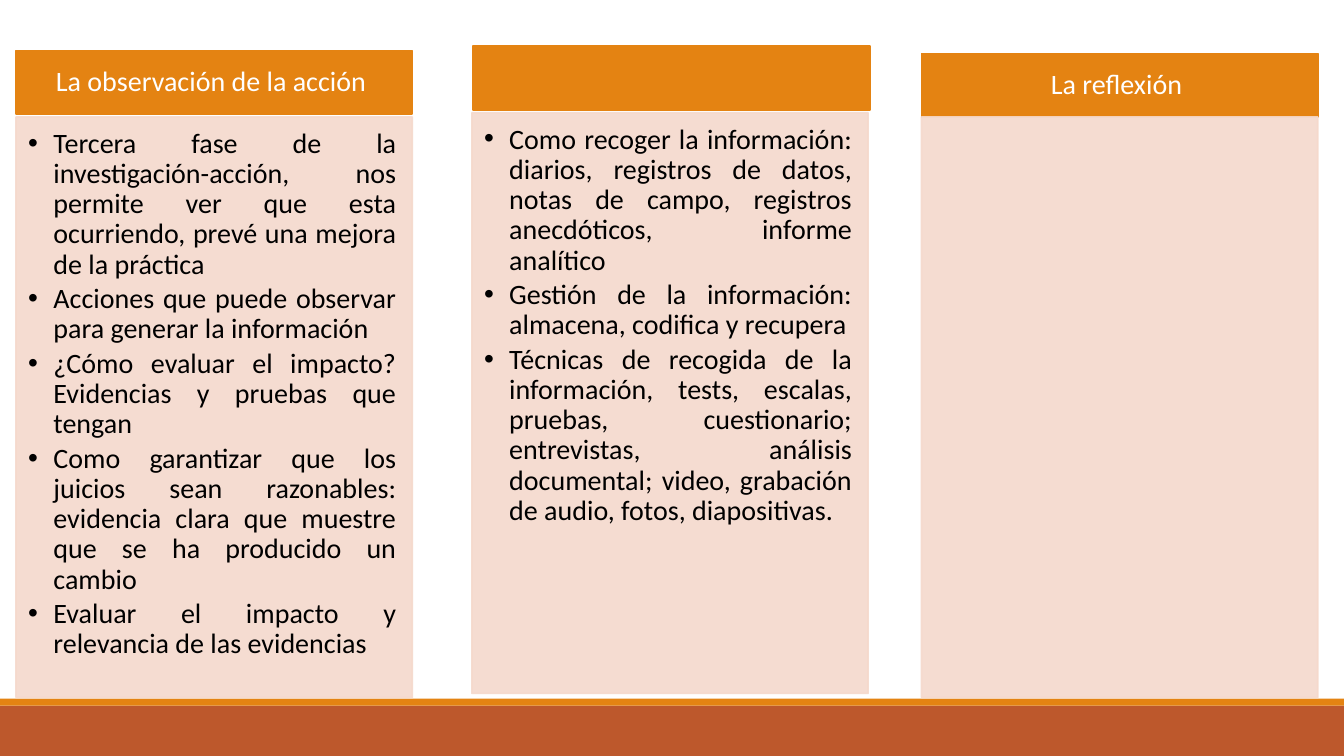
from lxml import etree
from pptx import Presentation
from pptx import util as u
from pptx.dml.color import RGBColor
from pptx.enum import shapes, text
from pptx.oxml.ns import qn

ORANGE, RUST, PINK = "E48312", "BD582C", "F5D9CC"
WHITE, BLACK = "FFFFFF", "000000"


def rgb(code):
    return RGBColor.from_string(code)


class Deck:
    font = "Calibri"
    size = u.Pt(20)

    def __init__(self):
        self.prs = Presentation()
        self.prs.slide_width = u.Inches(13.33)
        self.prs.slide_height = u.Inches(7.5)
        self.slide = self.prs.slides.add_slide(self.prs.slide_layouts[6])

    def rect(self, left, top, width, height, color, edge=True, alpha=100):
        wide, high = self.prs.slide_width / 100, self.prs.slide_height / 100
        box = self.slide.shapes.add_shape(
            shapes.MSO_SHAPE.RECTANGLE,
            round(left * wide), round(top * high),
            round(width * wide), round(height * high))
        box.shadow.inherit = False
        box.fill.solid()
        box.fill.fore_color.rgb = rgb(color)
        if edge:
            box.line.color.rgb = rgb(color)
            box.line.width = u.Pt(1.25)
        else:
            box.line.fill.background()
        if alpha < 100:
            for node in box._element.spPr.iter(qn("a:srgbClr")):
                etree.SubElement(node, qn("a:alpha")).set("val", str(alpha * 1000))
        return box

    def label(self, box, lines, color, align, anchor, inset, after):
        frame = box.text_frame
        frame.word_wrap = True
        frame.vertical_anchor = anchor
        (frame.margin_left, frame.margin_top, frame.margin_right,
         frame.margin_bottom) = map(u.Inches, inset)
        frame.text = "\n".join(lines)
        for para in frame.paragraphs:
            para.alignment = align
            para.line_spacing = 0.9
            para.space_after = u.Pt(after)
            for run in para.runs:
                run.font.name = self.font
                run.font.size = self.size
                run.font.color.rgb = rgb(color)
        return frame

    def head(self, left, top, width, title):
        box = self.rect(left, top, width, 8.4, ORANGE)
        if title:
            self.label(box, [title], WHITE, text.PP_ALIGN.CENTER,
                       text.MSO_ANCHOR.MIDDLE, (0.16, 0.09, 0.16, 0.09), 7)

    def body(self, left, top, width, items):
        box = self.rect(left, top, width, 76.8, PINK, alpha=90)
        if not items:
            return
        frame = self.label(box, items, BLACK, text.PP_ALIGN.JUSTIFY,
                           text.MSO_ANCHOR.TOP, (0.12, 0.12, 0.16, 0.17), 3)
        for para in frame.paragraphs:
            props = para._p.get_or_add_pPr()
            props.set("marL", str(u.Inches(0.25)))
            props.set("indent", str(u.Inches(-0.25)))
            etree.SubElement(props, qn("a:buFont")).set("typeface", "Arial")
            etree.SubElement(props, qn("a:buChar")).set("char", "•")


WIDTH = 29.48
COLUMNS = [
    (1.2, 1.2, 6.67, 15.47, WIDTH, "La observación de la acción ", [
        "Tercera fase de la investigación-acción, nos permite ver que esta "
        "ocurriendo, prevé una mejora de la práctica",
        "Acciones que puede observar para generar la información",
        "¿Cómo evaluar el impacto? Evidencias y pruebas que tengan",
        "Como garantizar que los juicios sean razonables: evidencia clara "
        "que muestre que se ha producido un cambio",
        "Evaluar el impacto y relevancia de las evidencias"]),
    (35.18, 35.11, 6.13, 14.93, 29.56, "", [
        "Como recoger la información: diarios, registros de datos, notas de "
        "campo, registros anecdóticos, informe analítico",
        "Gestión de la información: almacena, codifica y recupera",
        "Técnicas de recogida de la información, tests, escalas, pruebas, "
        "cuestionario; entrevistas, análisis documental; video, grabación "
        "de audio, fotos, diapositivas."]),
    (68.57, 68.57, 7.07, 15.47, WIDTH, "La reflexión ", []),
]


def main():
    deck = Deck()
    deck.rect(0, 93.33, 100, 6.67, RUST, edge=False)
    deck.rect(0, 92.4, 100, 0.93, ORANGE, edge=False)
    for left, inner, top, below, width, title, items in COLUMNS:
        deck.head(left, top, width, title)
        deck.body(inner, below, WIDTH, items)
    deck.prs.save("out.pptx")


if __name__ == "__main__":
    main()
